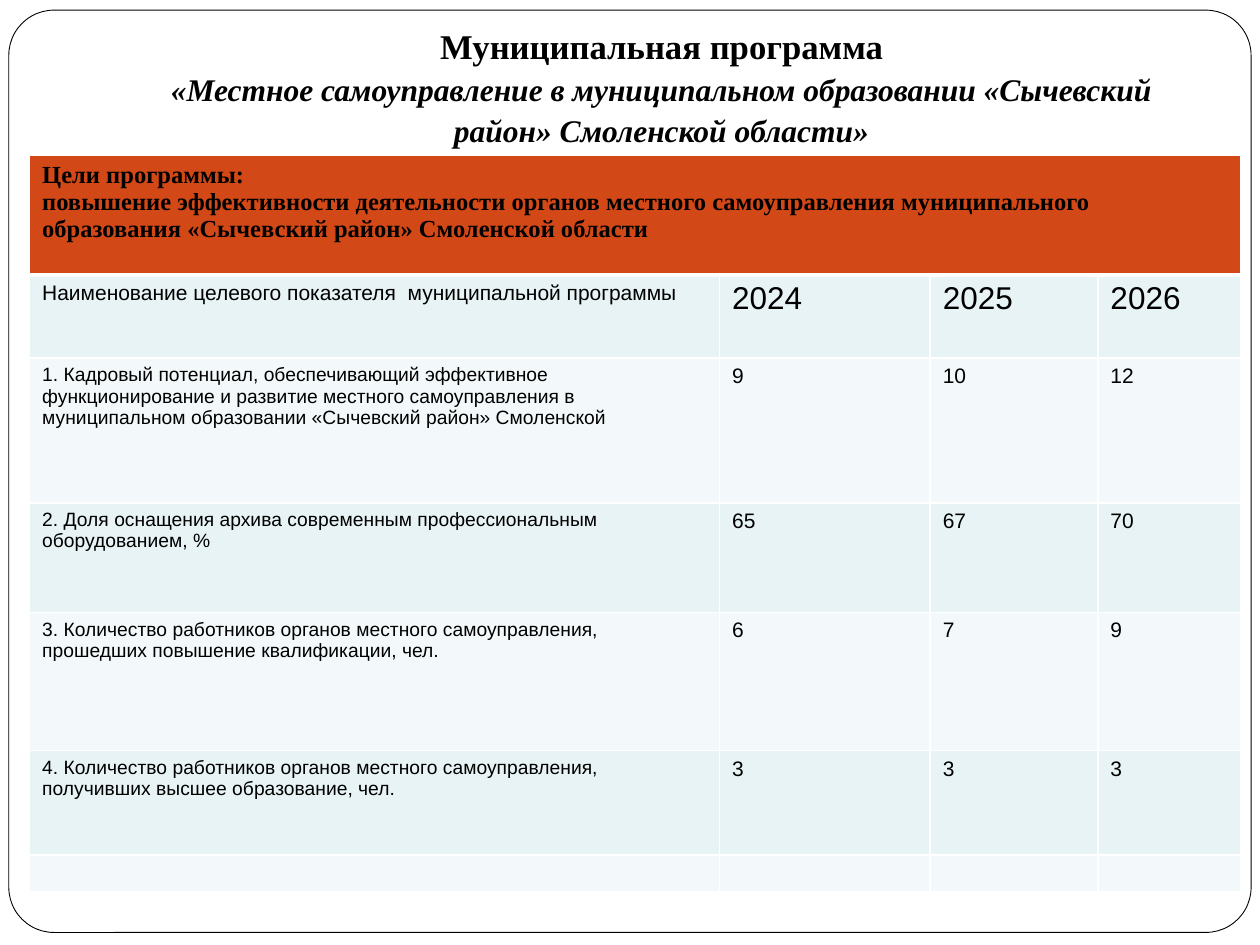
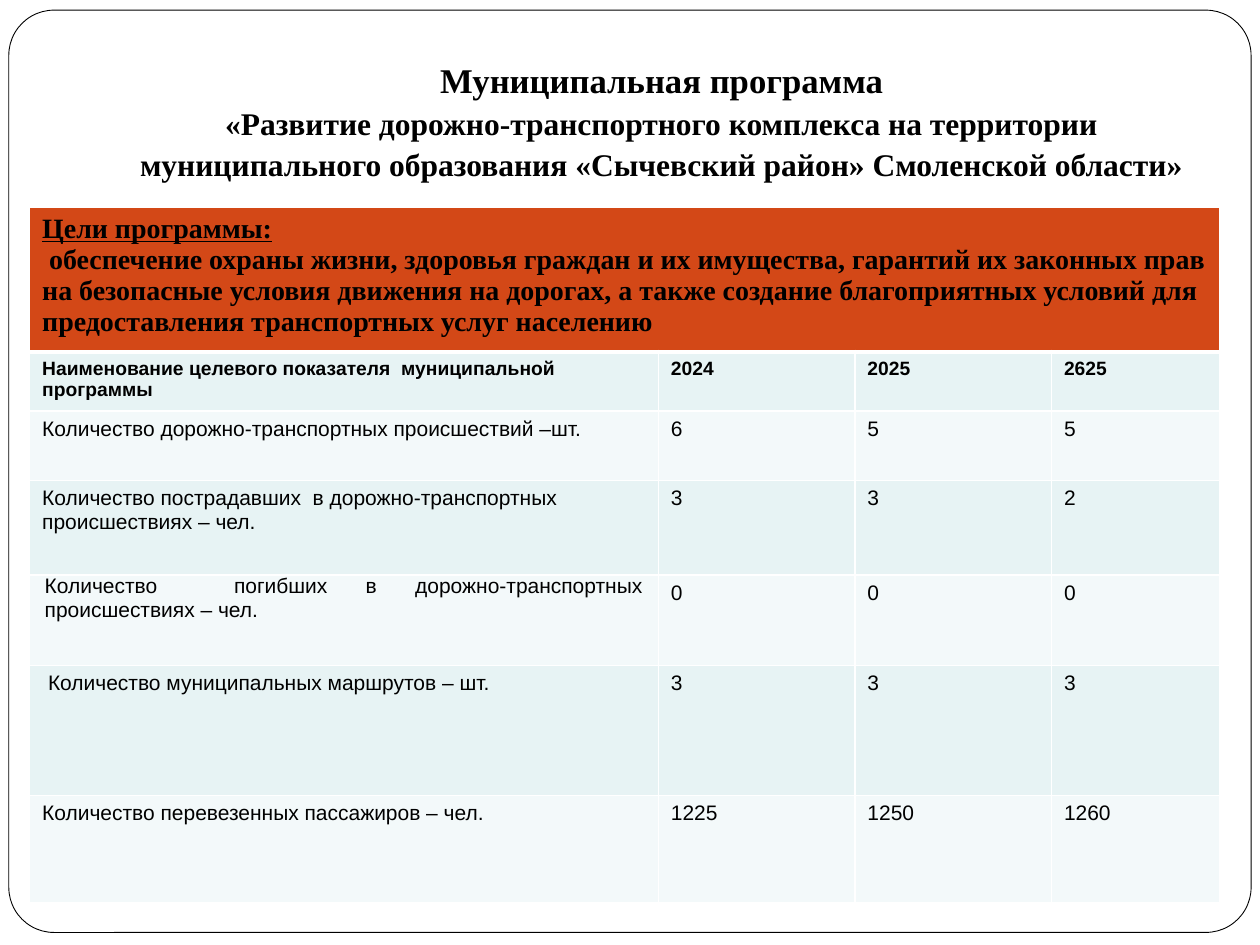
import pptx
import pptx.util
import pptx.dml.color
import pptx.enum.shapes
import pptx.enum.text
import pptx.oxml
import pptx.oxml.ns
import lxml.etree

W, H = 10, 7.5
SERIF, SANS = "Times New Roman", "Arial"
BLACK, WHITE, GOAL = "000000", "FFFFFF", "D34817"
BANDS = ("E7F3F4", "F3F9FA")
FRAME = (0.007, 0.0107, 0.986, 0.976)
TITLE = (0.1, 0.04, 0.85, 0.1667)
ALIGN = pptx.enum.text.PP_ALIGN
MARGINS = ("margin_left", "margin_top", "margin_right", "margin_bottom")

prs = pptx.Presentation()
prs.slide_width, prs.slide_height = pptx.util.Inches(W), pptx.util.Inches(H)


def rgb(value):
    return pptx.dml.color.RGBColor.from_string(value)


def place(box):
    """Turn shares of the slide into left, top, width, height."""
    return [int(share * size) for share, size in
            zip(box, (prs.slide_width, prs.slide_height) * 2)]


def set_margins(obj, values):
    for name, value in zip(MARGINS, values):
        setattr(obj, name, pptx.util.Inches(value))


def add_run(p, text, color=BLACK, **fmt):
    r = p.add_run()
    r.text = text
    r.font.color.rgb = rgb(color)
    for name, value in fmt.items():
        setattr(r.font, name, pptx.util.Pt(value) if name == "size" else value)


def add_frame(slide, box):
    sp = slide.shapes.add_shape(
        pptx.enum.shapes.MSO_SHAPE.ROUNDED_RECTANGLE, *place(box))
    sp.adjustments[0] = 0.049
    sp.shadow.inherit = False
    sp.fill.solid()
    sp.fill.fore_color.rgb = rgb(WHITE)
    sp.line.color.rgb = rgb(BLACK)
    sp.line.width = pptx.util.Pt(0.5)
    # Behind the title
    slide.shapes._spTree.insert(2, sp._element)


def add_title(slide, box, name, italic, bottom):
    sp = slide.shapes.title
    sp.left, sp.top, sp.width, sp.height = place(box)
    tf = sp.text_frame
    tf.word_wrap = True
    tf.auto_size = pptx.enum.text.MSO_AUTO_SIZE.NONE
    tf.vertical_anchor = pptx.enum.text.MSO_ANCHOR.BOTTOM
    set_margins(tf, (0.1, 0.05, 0.1, bottom))
    p = tf.paragraphs[0]
    p.alignment = ALIGN.CENTER
    p.line_spacing = 1.09
    add_run(p, "Муниципальная программа", name=SERIF, size=19.8, bold=True)
    p.add_line_break()
    add_run(p, name, name=SERIF, size=18, bold=True, italic=italic)


def set_borders(cell, **widths):
    """Draw white borders, 1 pt wide unless a side says otherwise."""
    tcPr = cell._tc.get_or_add_tcPr()
    for i, side in enumerate("LRTB"):
        width = pptx.util.Pt(widths.get(side, 1))
        tcPr.insert(i, pptx.oxml.parse_xml(
            f'<a:ln{side} {pptx.oxml.ns.nsdecls("a")} w="{width}"><a:solidFill>'
            f'<a:srgbClr val="{WHITE}"/></a:solidFill></a:ln{side}>'))


def fill_cell(cell, color, text, **fmt):
    cell.fill.solid()
    cell.fill.fore_color.rgb = rgb(color)
    p = cell.text_frame.paragraphs[0]
    if text:
        add_run(p, text, **fmt)
    else:
        end = lxml.etree.SubElement(p._p, pptx.oxml.ns.qn("a:endParaRPr"))
        end.set("sz", "1100")


def add_goal(tbl, goal, size, underline):
    cell = tbl.cell(0, 0)
    cell.merge(tbl.cell(0, len(tbl.columns) - 1))
    fmt = dict(name=SERIF, size=size, bold=True)
    fill_cell(cell, GOAL, "Цели программы:", underline=underline, **fmt)
    add_run(cell.text_frame.add_paragraph(), goal, **fmt)
    for c in tbl.rows[0].cells:
        set_borders(c, B=3)


def add_indicators(slide, box, cols, rows, goal, header, values, label_size):
    left, top, width, height = place(box)
    tbl = slide.shapes.add_table(
        len(rows), len(cols), left, top, width, height).table
    tbl.horz_banding = False
    for col, share in zip(tbl.columns, cols):
        col.width = int(width * share / sum(cols))
    for row, share in zip(tbl.rows, rows):
        row.height = int(height * share / sum(rows))
    add_goal(tbl, **goal)
    # Years, then one row for each indicator
    years, label_fmt, year_fmt = header
    label = "Наименование целевого показателя  муниципальной программы"
    for i, line in enumerate([(label, *years)] + values, 1):
        for j, text in enumerate(line):
            if i == 1:
                fmt = year_fmt if j else label_fmt
            else:
                fmt = dict(size=12 if j else label_size, bold=False)
            cell = tbl.cell(i, j)
            fill_cell(cell, BANDS[(i - 1) % 2], text, name=SANS, **fmt)
            set_borders(cell, T=3 if i == 1 else 1)
    return tbl


def add_program(name, italic, bottom, **table):
    slide = prs.slides.add_slide(prs.slide_layouts[5])
    add_frame(slide, FRAME)
    add_title(slide, TITLE, name, italic, bottom)
    return add_indicators(slide, **table)


# Local self-government
add_program(
    "«Местное самоуправление в муниципальном образовании «Сычевский район» "
    "Смоленской области»", italic=True, bottom=0.37,
    box=(0.0235, 0.1645, 0.961, 0.778),
    cols=(5.47, 1.67, 1.33, 1.13),
    rows=(0.95, 0.66, 1.15, 0.87, 1.1, 0.83, 0.28),
    goal=dict(goal="повышение эффективности деятельности органов местного "
                   "самоуправления муниципального образования «Сычевский район» "
                   "Смоленской области", size=14, underline=False),
    header=(("2024", "2025", "2026"), dict(size=12), dict(size=18)),
    values=[
        ("1. Кадровый потенциал, обеспечивающий эффективное функционирование и "
         "развитие местного самоуправления в муниципальном образовании "
         "«Сычевский район» Смоленской", "9", "10", "12"),
        ("2. Доля оснащения архива современным профессиональным "
         "оборудованием, %", "65", "67", "70"),
        ("3. Количество работников органов местного самоуправления, прошедших "
         "повышение квалификации, чел.", "6", "7", "9"),
        ("4. Количество работников органов местного самоуправления, получивших "
         "высшее образование, чел.", "3", "3", "3"),
        ("",) * 4],
    label_size=11)

# Roads and transport
year_head = dict(size=11, bold=True)
roads = add_program(
    "«Развитие дорожно-транспортного комплекса на территории муниципального "
    "образования «Сычевский район» Смоленской области»", italic=False, bottom=0.1,
    box=(0.0235, 0.219, 0.945, 0.736),
    cols=(4.99, 1.56, 1.56, 1.34),
    rows=(1.15, 0.47, 0.55, 0.75, 0.72, 1.03, 0.85),
    goal=dict(goal=" обеспечение охраны жизни, здоровья граждан и их имущества, "
                   "гарантий их законных прав на безопасные условия движения на "
                   "дорогах, а также создание благоприятных условий для "
                   "предоставления транспортных услуг населению",
              size=16, underline=True),
    header=(("2024", "2025", "2625"), year_head, year_head),
    values=[
        ("Количество дорожно-транспортных происшествий –шт.", "6", "5", "5"),
        ("Количество пострадавших  в дорожно-транспортных происшествиях – чел.",
         "3", "3", "2"),
        ("Количество  погибших в дорожно-транспортных происшествиях – чел.",
         "0", "0", "0"),
        (" Количество муниципальных маршрутов – шт.", "3", "3", "3"),
        ("Количество перевезенных пассажиров – чел.", "1225", "1250", "1260")],
    label_size=12)
deaths = roads.cell(4, 0)
set_margins(deaths, (0.12, 0, 0.12, 0))
deaths.text_frame.paragraphs[0].alignment = ALIGN.JUSTIFY

prs.save("out.pptx")
